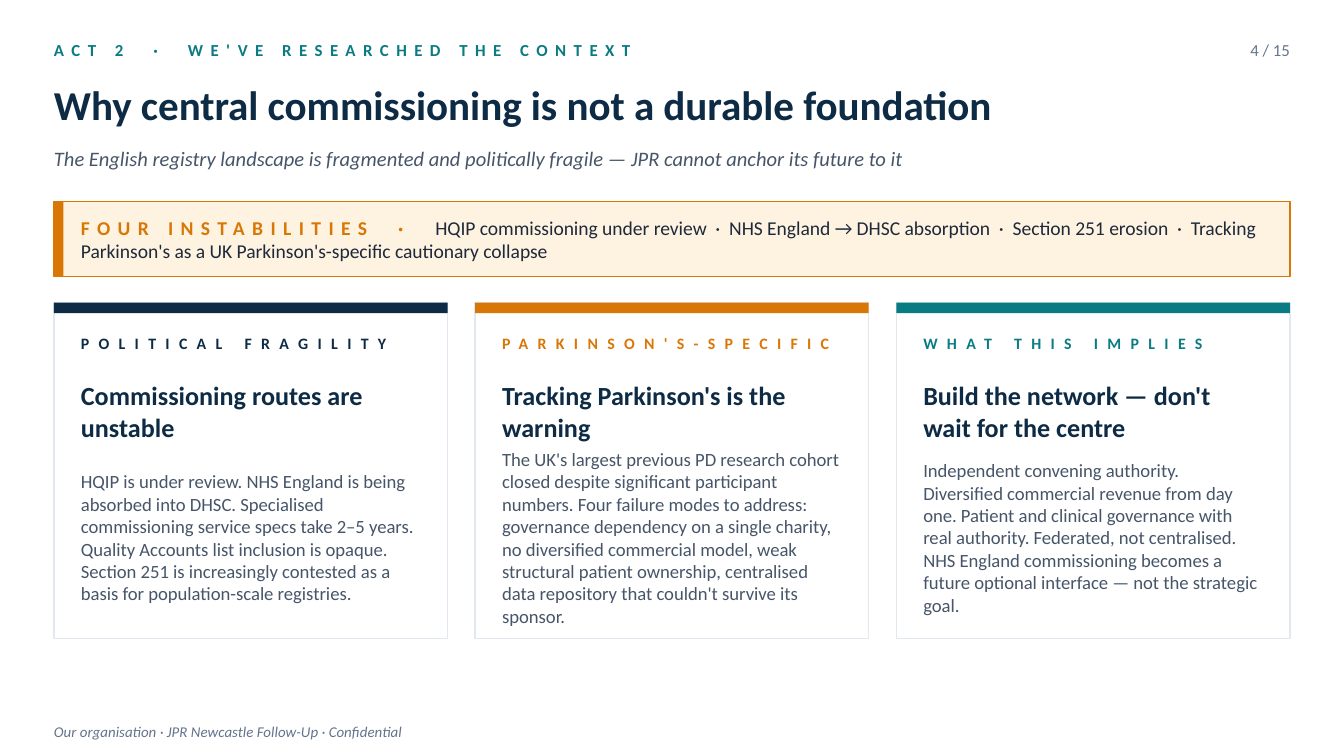
"""Build the slide on why central commissioning is not a durable foundation."""
from pptx import Presentation
from pptx import util as u
from pptx.dml import color
from pptx.enum import shapes, text

NAVY, TEAL, ORANGE = "0D2B45", "0A7B83", "D97706"
SLATE, GREY, INK = "475569", "64748B", "1E293B"
LEFT, WIDTH = 1.02, 23.36
INSET = 0.51

presentation = Presentation()
presentation.slide_width = u.Cm(25.4)
presentation.slide_height = u.Cm(14.29)
slide = presentation.slides.add_slide(presentation.slide_layouts[6])


def write(words, box=None, paragraph=None, size=10, colour=SLATE, bold=False,
          italic=False, spacing=0, align=text.PP_ALIGN.LEFT):
    if paragraph is None:
        frame = slide.shapes.add_textbox(*map(u.Cm, box)).text_frame
        frame.word_wrap = True
        frame.vertical_anchor = text.MSO_ANCHOR.MIDDLE
        frame.margin_left = frame.margin_right = 0
        frame.margin_top = frame.margin_bottom = 0
        paragraph = frame.paragraphs[0]
        paragraph.alignment = align
    run = paragraph.add_run()
    run.text = words
    run.font.name = "Calibri"
    run.font.size = u.Pt(size)
    run.font.bold = bold
    run.font.italic = italic
    run.font.color.rgb = color.RGBColor.from_string(colour)
    if spacing:
        run._r.get_or_add_rPr().set("spc", str(spacing * 100))
    return paragraph


def draw_block(box, fill, line=None):
    shape = slide.shapes.add_shape(shapes.MSO_SHAPE.RECTANGLE, *map(u.Cm, box))
    shape.shadow.inherit = False
    shape.fill.solid()
    shape.fill.fore_color.rgb = color.RGBColor.from_string(fill)
    if line:
        shape.line.color.rgb = color.RGBColor.from_string(line)
        shape.line.width = u.Pt(0.75)
    else:
        shape.line.fill.background()


write("ACT 2  ·  WE'VE RESEARCHED THE CONTEXT", (LEFT, 0.56, 15.24, 0.76),
      size=9, colour=TEAL, bold=True, spacing=4)
write("4 / 15", (23.11, 0.56, 1.27, 0.76), size=9, colour=GREY,
      align=text.PP_ALIGN.RIGHT)
write("Why central commissioning is not a durable foundation",
      (LEFT, 1.27, WIDTH, 1.4), size=22, colour=NAVY, bold=True)
write("The English registry landscape is fragmented and politically fragile — "
      "JPR cannot anchor its future to it",
      (LEFT, 2.59, WIDTH, 0.81), size=11, italic=True)

band_top, band_height = 3.81, 1.42
draw_block((LEFT, band_top, WIDTH, band_height), "FEF3E0", ORANGE)
draw_block((LEFT, band_top, 0.18, band_height), ORANGE)
band = write("FOUR INSTABILITIES  ·  ",
             (LEFT + INSET, band_top, 22.86, band_height),
             size=10.5, colour=ORANGE, bold=True, spacing=4)
write("HQIP commissioning under review  ·  NHS England → DHSC absorption  ·  "
      "Section 251 erosion  ·  Tracking Parkinson's as a UK "
      "Parkinson's-specific cautionary collapse",
      paragraph=band, size=10.5, colour=INK)

cards = [
    (NAVY, "POLITICAL FRAGILITY", "Commissioning routes are unstable",
     "HQIP is under review. NHS England is being absorbed into DHSC. "
     "Specialised commissioning service specs take 2–5 years. Quality Accounts "
     "list inclusion is opaque. Section 251 is increasingly contested as a "
     "basis for population-scale registries."),
    (ORANGE, "PARKINSON'S-SPECIFIC", "Tracking Parkinson's is the warning",
     "The UK's largest previous PD research cohort closed despite significant "
     "participant numbers. Four failure modes to address: governance "
     "dependency on a single charity, no diversified commercial model, weak "
     "structural patient ownership, centralised data repository that couldn't "
     "survive its sponsor."),
    (TEAL, "WHAT THIS IMPLIES", "Build the network — don't wait for the centre",
     "Independent convening authority. Diversified commercial revenue from day "
     "one. Patient and clinical governance with real authority. Federated, not "
     "centralised. NHS England commissioning becomes a future optional "
     "interface — not the strategic goal."),
]
card_top, card_width, gap = 5.72, 7.44, 0.52
text_width = card_width - 2 * INSET
for index, (accent, label, heading, body) in enumerate(cards):
    left = LEFT + index * (card_width + gap)
    text_left = left + INSET
    draw_block((left, card_top, card_width, 6.35), "FFFFFF", "E2E8F0")
    draw_block((left, card_top, card_width, 0.2), accent)
    write(label, (text_left, 6.17, text_width, 0.64), size=8.5, colour=accent,
          bold=True, spacing=5)
    write(heading, (text_left, 6.88, text_width, 1.78), size=14, colour=NAVY,
          bold=True)
    write(body, (text_left, 8.51, text_width, 3.3))

write("Our organisation · JPR Newcastle Follow-Up · Confidential",
      (LEFT, 13.54, WIDTH, 0.56), size=8, colour=GREY, italic=True)

presentation.save("out.pptx")
